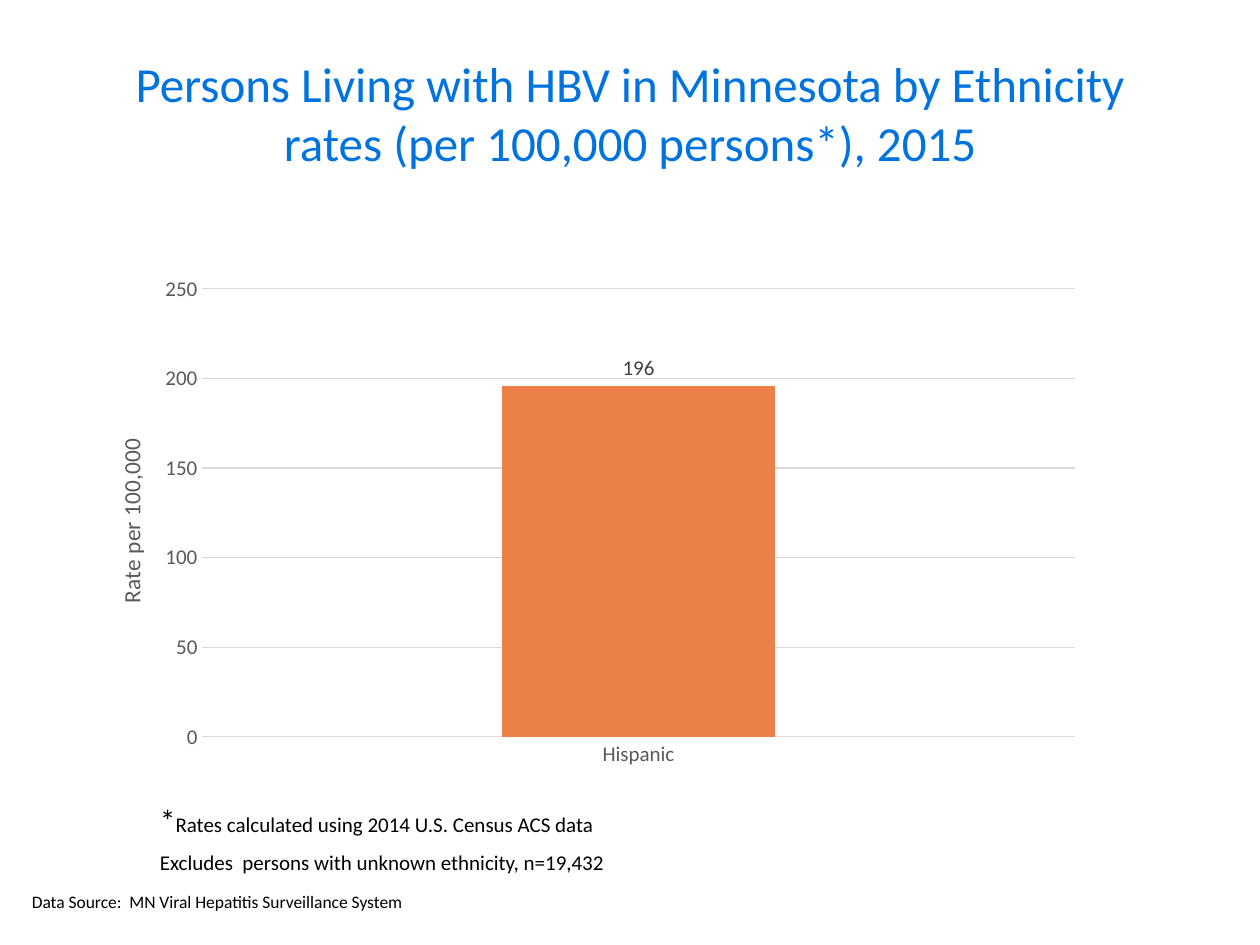
from lxml import etree
from pptx import Presentation
from pptx.chart.data import CategoryChartData
from pptx.dml.color import RGBColor
from pptx.enum.chart import XL_CHART_TYPE, XL_LABEL_POSITION, XL_TICK_MARK
from pptx.enum.text import MSO_ANCHOR, PP_ALIGN
from pptx.oxml.ns import qn
from pptx.util import Inches, Pt

COLORS = {"title": "0073DF", "text": "000000", "axis": "595959",
          "grid": "D9D9D9", "bar": "EC8049", "label": "404040"}


def style(font, size, color):
    font.name = "Calibri"
    font.size = Pt(size)
    font.bold = False
    font.color.rgb = RGBColor.from_string(COLORS[color])


def set_layout(parent, **values):
    """Place a chart part by fractions of the chart area."""
    layout = parent.get_or_add_layout() if hasattr(parent, "get_or_add_layout") else parent.find(qn("c:layout"))
    if layout is None:
        layout = etree.Element(qn("c:layout"))
        parent.insert(0, layout)
    for child in list(layout):
        layout.remove(child)
    manual = etree.SubElement(layout, qn("c:manualLayout"))
    for tag, value in values.items():
        etree.SubElement(manual, qn(f"c:{tag}")).set("val", str(value))


deck = Presentation()
deck.slide_width, deck.slide_height = Inches(10), Inches(7.5)
page = deck.slides.add_slide(deck.slide_layouts[6])

# Title
box = page.shapes.add_textbox(Inches(0.5), Inches(0.15), Inches(9), Inches(1.26))
box.text_frame.word_wrap = True
box.text_frame.vertical_anchor = MSO_ANCHOR.BOTTOM
para = box.text_frame.paragraphs[0]
para.text = "Persons Living with HBV in Minnesota by Ethnicity\vrates (per 100,000 persons*), 2015"
para.alignment = PP_ALIGN.CENTER
style(para.font, 28, "title")

# Rate chart
data = CategoryChartData()
data.categories = ["Hispanic"]
data.add_series("Series 1", [196])
chart = page.shapes.add_chart(XL_CHART_TYPE.COLUMN_CLUSTERED, Inches(0.64), Inches(2.11),
                              Inches(8.05), Inches(4.06), data).chart
chart.has_title = False
chart.has_legend = False
style(chart.font, 10, "text")

plot = chart.plots[0]
plot.gap_width, plot.overlap = 219, -27
plot.vary_by_categories = False
bars = plot.series[0]
bars.format.fill.solid()
bars.format.fill.fore_color.rgb = RGBColor.from_string(COLORS["bar"])
labels = bars.data_labels
labels.show_value = True
labels.position = XL_LABEL_POSITION.OUTSIDE_END
style(labels.font, 12, "label")

# Axes
rates, groups = chart.value_axis, chart.category_axis
for axis in (rates, groups):
    axis.major_tick_mark = axis.minor_tick_mark = XL_TICK_MARK.NONE
    style(axis.tick_labels.font, 12, "axis")
rates.minimum_scale, rates.maximum_scale, rates.major_unit = 0, 250, 50
rates.format.line.fill.background()
for line in (groups.format.line, rates.major_gridlines.format.line):
    line.color.rgb = RGBColor.from_string(COLORS["grid"])
    line.width = Pt(0.75)
para = rates.axis_title.text_frame.paragraphs[0]
para.text = "Rate per 100,000"
style(para.font, 13.3, "axis")
rates.axis_title.text_frame.paragraphs[0].runs[0].font.size = Pt(13.3)

# Chart placement
title_layout = rates.axis_title._element
set_layout(title_layout, xMode="edge", yMode="edge", x=0.03, y=0.33)
set_layout(chart._chartSpace.chart.plotArea, layoutTarget="inner", xMode="edge",
           yMode="edge", x=0.12, y=0.045, w=0.86, h=0.876)

# Footnotes
box = page.shapes.add_textbox(Inches(1.17), Inches(6.31), Inches(5.95), Inches(1.01))
box.text_frame.word_wrap = True
para = box.text_frame.paragraphs[0]
for text, size in (("*", 18), ("Rates calculated using 2014 U.S. Census ACS data", 12)):
    span = para.add_run()
    span.text = text
    style(span.font, size, "text")
para = box.text_frame.add_paragraph()
para.text = "Excludes  persons with unknown ethnicity, n=19,432"
para.space_before = Pt(6)
style(para.font, 12, "text")

# Data source
box = page.shapes.add_textbox(Inches(-0.44), Inches(7.02), Inches(3.73), Inches(0.27))
box.text_frame.word_wrap = True
box.text_frame.vertical_anchor = MSO_ANCHOR.MIDDLE
para = box.text_frame.paragraphs[0]
para.text = "Data Source:  MN Viral Hepatitis Surveillance System"
para.alignment = PP_ALIGN.RIGHT
style(para.font, 10, "text")

deck.save("out.pptx")
